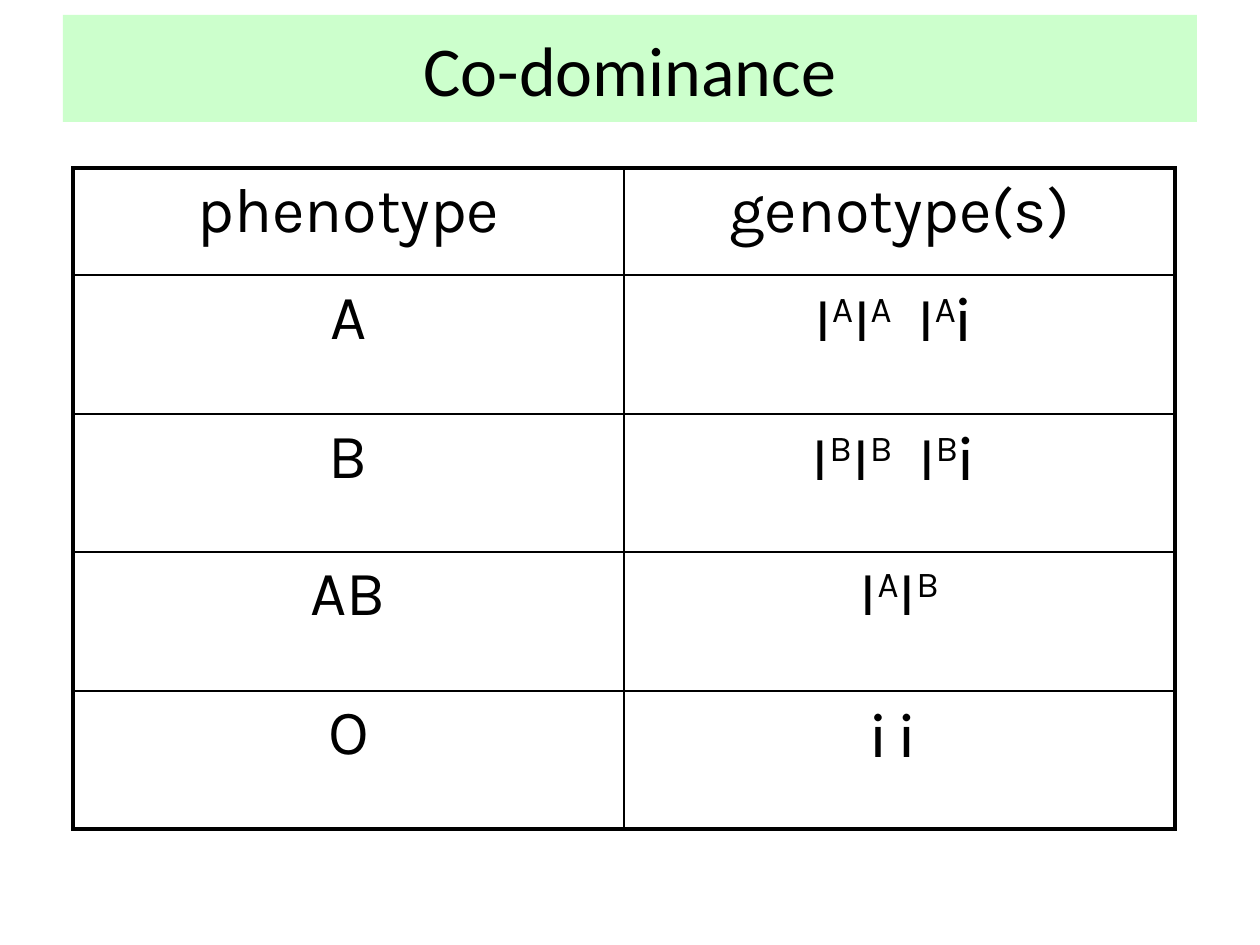
import pptx
import pptx.dml.color
import pptx.enum.shapes
import pptx.enum.text
import pptx.oxml.ns
import pptx.util
import lxml.etree

THEME = {
    "ink": "000000",
    "band": "CCFFCC",
    "title_font": "Calibri",
    "body_font": "Karla",
    "title_size": 40,
    "body_size": 36,
    "outer_line": 2.25,
    "inner_line": 1,
}
PX = 914400 / 126


def px(n):
    return pptx.util.Emu(round(n * PX))


def add_text(p, text, font=THEME["body_font"], size=THEME["body_size"], raised=False, spacing=0):
    r = p.add_run()
    r.text = text
    r.font.name = font
    r.font.size = pptx.util.Pt(size)
    r.font.color.rgb = pptx.dml.color.RGBColor.from_string(THEME["ink"])
    rPr = r._r.get_or_add_rPr()
    if raised:
        rPr.set("baseline", "30000")
    if spacing:
        rPr.set("spc", str(spacing * 100))


prs = pptx.Presentation()
prs.slide_width, prs.slide_height = px(1260), px(945)
s = prs.slides.add_slide(prs.slide_layouts[6])

sp = s.shapes.add_shape(pptx.enum.shapes.MSO_SHAPE.RECTANGLE, px(63), px(15), px(1134), px(107))
sp.shadow.inherit = False
sp.fill.solid()
sp.fill.fore_color.rgb = pptx.dml.color.RGBColor.from_string(THEME["band"])
sp.line.fill.background()
tf = sp.text_frame
tf.word_wrap = True
tf.vertical_anchor = pptx.enum.text.MSO_ANCHOR.MIDDLE
p = tf.paragraphs[0]
p.alignment = pptx.enum.text.PP_ALIGN.CENTER
add_text(p, "Co-dominance", font=THEME["title_font"], size=THEME["title_size"])

raised = {"raised": True}
gap = {"spacing": 6}
recessive = {"font": THEME["title_font"]}
rows = [
    ("phenotype", [("genotype(s)", {})]),
]
for allele in "AB":
    rows.append((allele, [
        ("I", {}), (allele, raised), ("I", {}), (allele, raised), (" ", gap),
        ("I", {}), (allele, raised), ("i ", recessive),
    ]))
rows += [
    ("AB", [("I", {}), ("A", raised), ("I", {}), ("B", raised)]),
    ("O", [("i i ", recessive)]),
]

heights = [107, 139, 138, 139, 138]
tbl = s.shapes.add_table(len(rows), 2, px(73), px(168), px(1102), px(sum(heights))).table
tbl.first_row = False
tbl.horz_banding = False
for col in tbl.columns:
    col.width = px(551)

for i, (phenotype, genotype) in enumerate(rows):
    tbl.rows[i].height = px(heights[i])
    for j, runs in enumerate([[(phenotype, {})], genotype]):
        cell = tbl.cell(i, j)
        p = cell.text_frame.paragraphs[0]
        p.alignment = pptx.enum.text.PP_ALIGN.CENTER
        p.space_before = pptx.util.Pt(7.2)
        for text, fmt in runs:
            add_text(p, text, **fmt)

        tcPr = cell._tc.get_or_add_tcPr()
        outer = {"L": j == 0, "R": j == 1, "T": i == 0, "B": i == len(rows) - 1}
        for side, is_outer in outer.items():
            width = THEME["outer_line"] if is_outer else THEME["inner_line"]
            ln = lxml.etree.SubElement(tcPr, pptx.oxml.ns.qn("a:ln" + side), w=str(pptx.util.Pt(width)))
            fill = lxml.etree.SubElement(ln, pptx.oxml.ns.qn("a:solidFill"))
            lxml.etree.SubElement(fill, pptx.oxml.ns.qn("a:srgbClr"), val=THEME["ink"])
        cell.fill.background()

prs.save("out.pptx")
